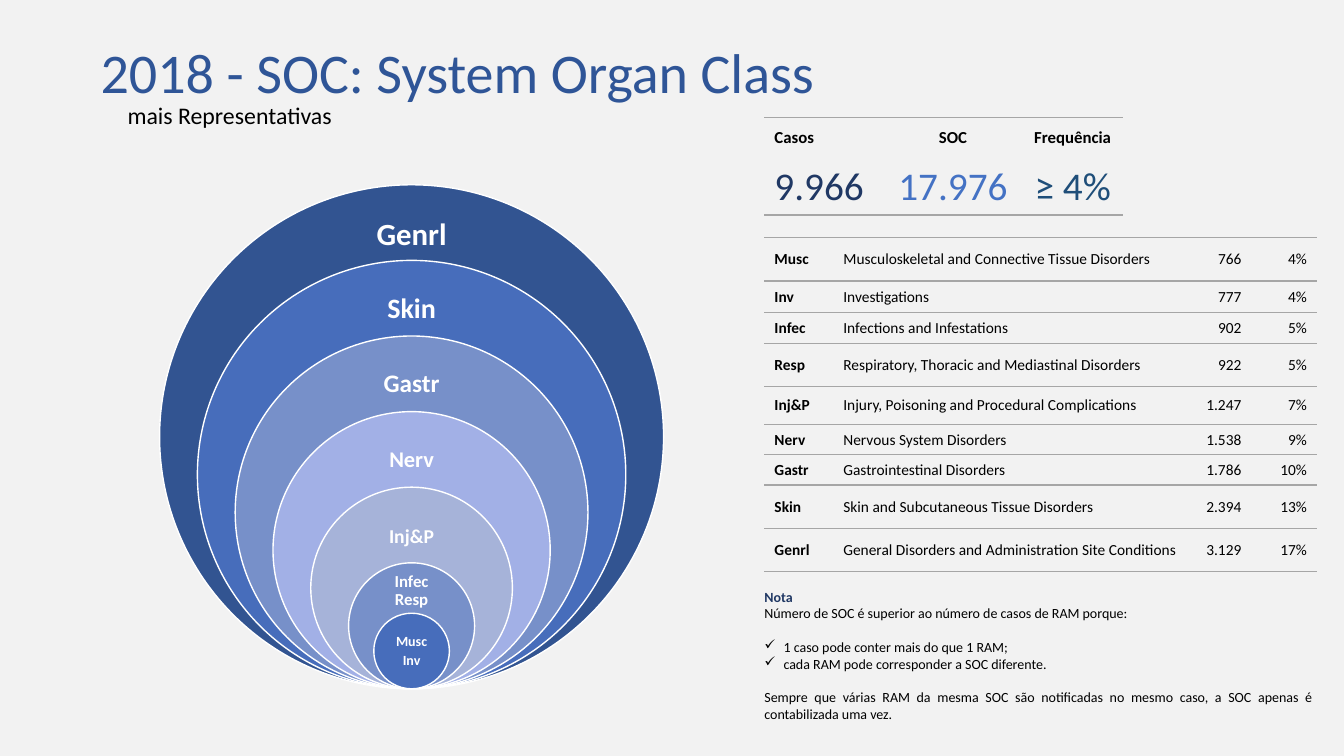
from dataclasses import dataclass
from typing import Optional, Sequence

from lxml.etree import SubElement
from pptx import Presentation
from pptx.dml.color import RGBColor
from pptx.enum.shapes import MSO_SHAPE
from pptx.enum.text import MSO_ANCHOR, PP_ALIGN
from pptx.oxml.ns import qn
from pptx.util import Emu, Inches, Pt

GRID = 1 / 12  # inches: the slide is 160 columns by 90 rows
COLUMNS, ROWS = 160, 90
RIGHT_COLUMN = 91
RING_CENTRE, RING_BASE = 49, 82
NO_STYLE = "{2D5ABB26-0587-4C30-8999-92F81FD0307C}"


@dataclass(frozen=True)
class Theme:
    font: str = "Calibri"
    background: str = "F2F2F2"
    text: str = "000000"
    white: str = "FFFFFF"
    title: str = "2F5597"
    navy: str = "203864"
    blue: str = "4472C4"
    teal: str = "1F4E79"
    rule: str = "A6A6A6"
    ring_dark: str = "325491"
    ring_blue: str = "476DBB"
    ring_mid: str = "7790C9"
    ring_lilac: str = "A2B0E6"
    ring_pale: str = "A6B3D9"
    title_size: float = 40
    subtitle_size: float = 17
    figure_size: float = 28
    header_size: float = 12
    row_size: float = 11
    note_size: float = 10


THEME = Theme()


@dataclass(frozen=True)
class Line:
    text: str
    size: float
    color: str = THEME.text
    bold: bool = False
    align: PP_ALIGN = PP_ALIGN.LEFT
    spacing: Optional[float] = None
    before: float = 0
    bullet: str = ""


@dataclass(frozen=True)
class Ring:
    diameter: float
    fill: str
    names: Sequence[str]
    size: float
    label_offset: float  # rows from the ring's top to the label's middle
    gap: float = 0


@dataclass(frozen=True)
class Organ:
    code: str
    name: str
    count: str
    share: str
    height: float


RINGS = [
    Ring(60, THEME.ring_dark, ["Genrl"], 22, 6),
    Ring(51, THEME.ring_blue, ["Skin"], 20, 5.85),
    Ring(42, THEME.ring_mid, ["Gastr"], 18, 5.8),
    Ring(33, THEME.ring_lilac, ["Nerv"], 16, 5.8),
    Ring(24, THEME.ring_pale, ["Inj&P"], 14, 6),
    Ring(15, THEME.ring_mid, ["Infec", "Resp"], 12, 3.4),
    Ring(9, THEME.ring_blue, ["Musc", "Inv"], 10, 4.6, 3),
]
ORGANS = [
    Organ("Musc", "Musculoskeletal and Connective Tissue Disorders", "766", "4%", 5.15),
    Organ("Inv", "Investigations", "777", "4%", 3.8),
    Organ("Infec", "Infections and Infestations", "902", "5%", 3.6),
    Organ("Resp", "Respiratory, Thoracic and Mediastinal Disorders", "922", "5%", 5.15),
    Organ("Inj&P", "Injury, Poisoning and Procedural Complications", "1.247", "7%", 4.55),
    Organ("Nerv", "Nervous System Disorders", "1.538", "9%", 3.6),
    Organ("Gastr", "Gastrointestinal Disorders", "1.786", "10%", 3.6),
    Organ("Skin", "Skin and Subcutaneous Tissue Disorders", "2.394", "13%", 5.15),
    Organ("Genrl", "General Disorders and Administration Site Conditions", "3.129", "17%", 5.15),
]


def grid(units: float) -> Emu:
    return Inches(units * GRID)


def color(value: str) -> RGBColor:
    return RGBColor.from_string(value)


def write(tf, lines: Sequence[Line]) -> None:
    for i, line in enumerate(lines):
        p = tf.add_paragraph() if i else tf.paragraphs[0]
        p.alignment = line.align
        p.space_before = Pt(line.before)
        if line.spacing:
            p.line_spacing = line.spacing
        if line.bullet:
            pPr = p._p.get_or_add_pPr()
            pPr.set("marL", str(Inches(0.19)))
            pPr.set("indent", str(-Inches(0.19)))
            SubElement(pPr, qn("a:buChar"), char=line.bullet)
        r = p.add_run()
        r.text = line.text
        r.font.name = THEME.font
        r.font.size = Pt(line.size)
        r.font.bold = line.bold
        r.font.color.rgb = color(line.color)


def add_text(shapes, x: float, y: float, w: float, h: float, lines: Sequence[Line],
             anchor: MSO_ANCHOR = MSO_ANCHOR.TOP, inset: bool = True) -> None:
    tf = shapes.add_textbox(grid(x), grid(y), grid(w), grid(h)).text_frame
    tf.word_wrap = True
    tf.vertical_anchor = anchor
    if not inset:
        tf.margin_left = tf.margin_right = tf.margin_top = tf.margin_bottom = 0
    write(tf, lines)


def set_rules(cell, top: bool, bottom: bool) -> None:
    """Draw the cell's horizontal borders and hide its other ones."""
    tcPr = cell._tc.get_or_add_tcPr()
    for side, shown in (("L", False), ("R", False), ("T", top), ("B", bottom)):
        ln = SubElement(tcPr, qn(f"a:ln{side}"), w=str(Pt(1)))
        if shown:
            fill = SubElement(ln, qn("a:solidFill"))
            SubElement(fill, qn("a:srgbClr"), val=THEME.rule)
        else:
            SubElement(ln, qn("a:noFill"))
    cell.fill.background()


def add_table(shapes, y: float, widths: Sequence[float], heights: Sequence[float],
              rows: Sequence[Sequence[Line]], inner_rules: bool) -> None:
    frame = shapes.add_table(len(rows), len(widths), grid(RIGHT_COLUMN), grid(y),
                             grid(sum(widths)), grid(sum(heights)))
    table = frame.table
    table.first_row = table.horz_banding = False
    table._tbl.tblPr.find(qn("a:tableStyleId")).text = NO_STYLE
    for column, width in zip(table.columns, widths):
        column.width = grid(width)
    for i, (height, row) in enumerate(zip(heights, rows)):
        table.rows[i].height = grid(height)
        for j, line in enumerate(row):
            cell = table.cell(i, j)
            cell.vertical_anchor = MSO_ANCHOR.MIDDLE
            if line.align == PP_ALIGN.LEFT:
                cell.margin_right = 0
            set_rules(cell, inner_rules or i == 0, inner_rules or i == len(rows) - 1)
            write(cell.text_frame, [line])


def add_ring(shapes, ring: Ring) -> None:
    d, top = ring.diameter, RING_BASE - ring.diameter
    left = RING_CENTRE - d / 2
    s = shapes.add_shape(MSO_SHAPE.OVAL, grid(left), grid(top), grid(d), grid(d))
    s.shadow.inherit = False
    s.fill.solid()
    s.fill.fore_color.rgb = color(ring.fill)
    s.line.color.rgb = color(THEME.white)
    s.line.width = Pt(1)
    label = [Line(name, ring.size, THEME.white, True, PP_ALIGN.CENTER, 0.9, ring.gap * (i > 0))
             for i, name in enumerate(ring.names)]
    width, height = d * 0.6, 5
    add_text(shapes, RING_CENTRE - width / 2, top + ring.label_offset - height / 2,
             width, height, label, MSO_ANCHOR.MIDDLE, inset=False)


def add_note(shapes) -> None:
    size, justify, gap = THEME.note_size, PP_ALIGN.JUSTIFY, 12
    add_text(shapes, RIGHT_COLUMN, 70, 65.2, 16.7, [
        Line("Nota", size, THEME.navy, True, justify),
        Line("Número de SOC é superior ao número de casos de RAM porque:", size, align=justify),
        Line("1 caso pode conter mais do que 1 RAM;", size, align=justify, before=gap, bullet="✓"),
        Line("cada RAM pode corresponder a SOC diferente.", size, align=justify, bullet="✓"),
        Line("Sempre que várias RAM da mesma SOC são notificadas no mesmo caso, "
             "a SOC apenas é contabilizada uma vez.", size, align=justify, before=gap),
    ], inset=False)


def main() -> None:
    prs = Presentation()
    prs.slide_width, prs.slide_height = grid(COLUMNS), grid(ROWS)
    slide = prs.slides.add_slide(prs.slide_layouts[6])
    slide.background.fill.solid()
    slide.background.fill.fore_color.rgb = color(THEME.background)
    shapes = slide.shapes

    add_note(shapes)
    add_text(shapes, 10.8, 4.8, 108, 7.5,
             [Line("2018 - SOC: System Organ Class", THEME.title_size, THEME.title, spacing=0.9)])
    add_text(shapes, 14, 11.5, 50.5, 4.9,
             [Line("mais Representativas", THEME.subtitle_size, align=PP_ALIGN.JUSTIFY,
                   spacing=0.9)], MSO_ANCHOR.MIDDLE)

    aligns = (PP_ALIGN.LEFT, PP_ALIGN.CENTER, PP_ALIGN.CENTER)
    headers = [Line(text, THEME.header_size, bold=True, align=align)
               for text, align in zip(("Casos", "SOC", "Frequência"), aligns)]
    figures = [Line(text, THEME.figure_size, tint, align=align) for text, tint, align in
               zip(("9.966", "17.976", "≥ 4%"), (THEME.navy, THEME.blue, THEME.teal), aligns)]
    add_table(shapes, 14, (14.2, 16.5, 12), (4.8, 6.8), (headers, figures), False)

    size, right = THEME.row_size, PP_ALIGN.RIGHT
    organ_rows = [(Line(o.code, size, bold=True), Line(o.name, size),
                   Line(o.count, size, align=right), Line(o.share, size, align=right))
                  for o in ORGANS]
    add_table(shapes, 28.3, (8.2, 42.4, 7.4, 7.8), [o.height for o in ORGANS], organ_rows, True)

    rings = shapes.add_group_shape().shapes
    for ring in RINGS:
        add_ring(rings, ring)
    prs.save("out.pptx")


if __name__ == "__main__":
    main()
